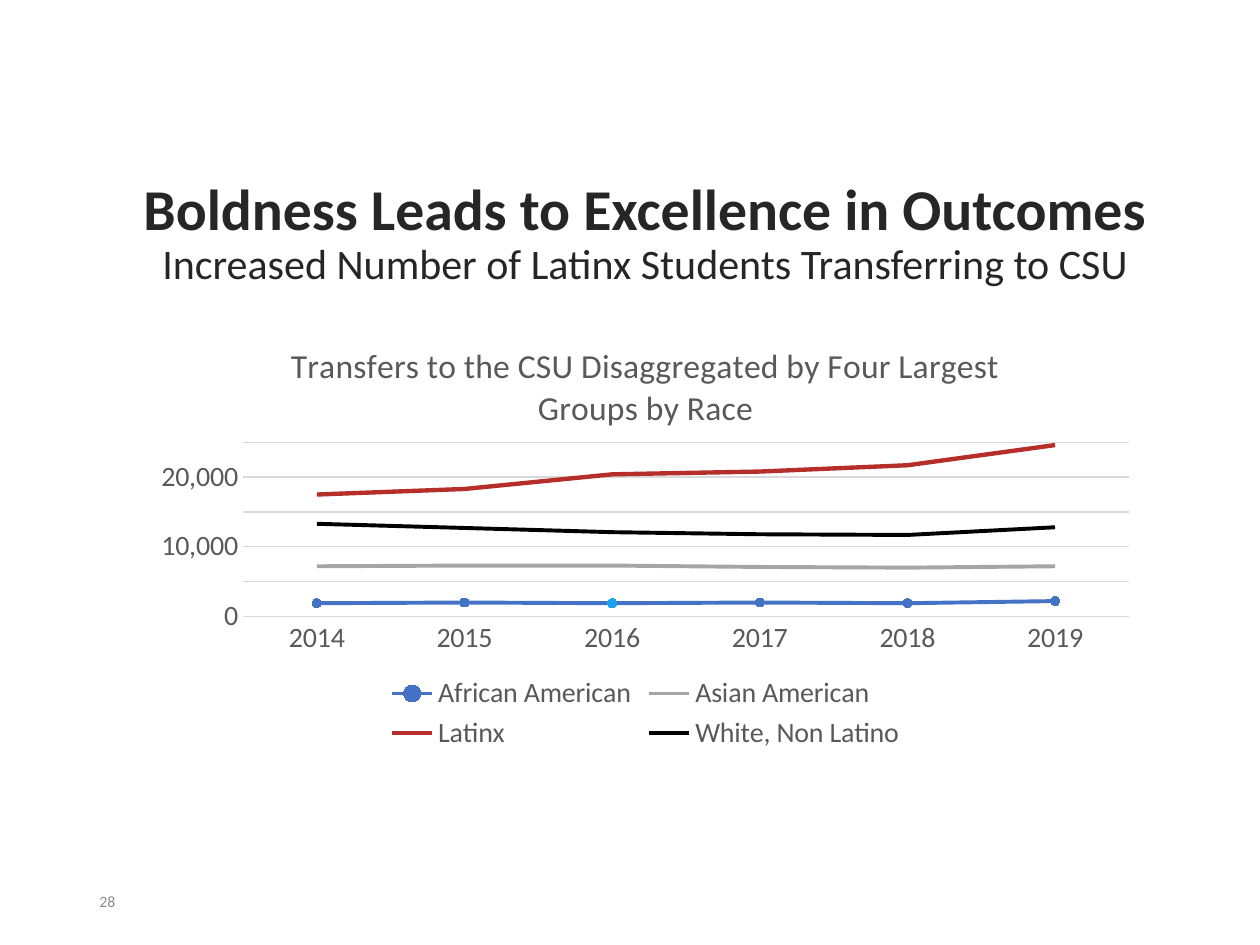
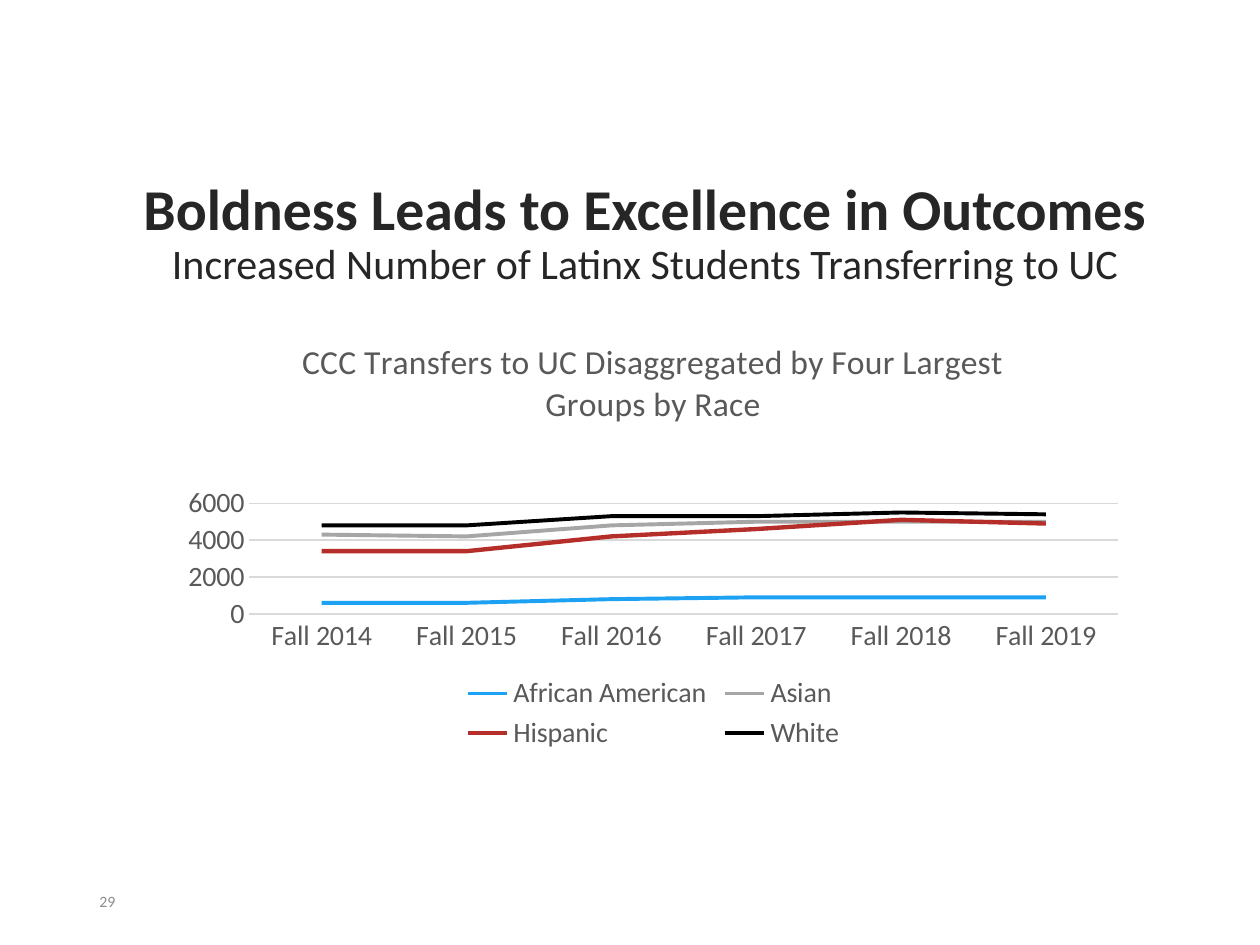
from copy import deepcopy
from dataclasses import dataclass

from lxml import etree
from pptx import Presentation
from pptx import util as u
from pptx.chart.data import CategoryChartData
from pptx.dml.color import RGBColor
from pptx.enum import chart as ce
from pptx.enum import text as te
from pptx.oxml.ns import qn

WIDE, HIGH = u.Inches(10), u.Inches(7.5)
FONT = "Calibri"
COLORS = {
    "head": "262626", "label": "595959", "page": "8C8C8C", "grid": "D9D9D9",
    "blue": "4472C4", "sky": "1DA1F2", "gray": "A5A5A5", "ash": "A6A6A6",
    "red": "B52E29", "black": "000000",
}
HEAD = "Boldness Leads to Excellence in Outcomes"


@dataclass
class Box:
    """A frame in percent of its parent."""
    x: float
    y: float
    w: float
    h: float

    def place(self) -> tuple[int, ...]:
        return (int(self.x * WIDE / 100), int(self.y * HIGH / 100),
                int(self.w * WIDE / 100), int(self.h * HIGH / 100))


@dataclass
class Line:
    name: str
    vals: list[int]
    color: str
    width: float = 2.25
    dots: bool = False


@dataclass
class Page:
    num: int
    sub: str
    title: str
    frame: Box
    plot: Box
    cats: list[str]
    lines: list[Line]
    top: int
    step: int
    form: str = "General"
    minor: bool = False
    accent: int | None = None


HEAD_BOX = Box(8.1, 17, 86.2, 15.6)
NUM_BOX = Box(6.9, 92.7, 22.5, 5.3)
YEARS = range(2014, 2020)

PAGES = [
    Page(28, "Increased Number of Latinx Students Transferring to CSU",
         "Transfers to the CSU Disaggregated by Four Largest Groups by Race",
         Box(11.3, 33.9, 79.9, 46.1), Box(10, 28, 88, 40),
         [str(y) for y in YEARS],
         [Line("African American", [1900, 2000, 1900, 2000, 1900, 2200], "blue", dots=True),
          Line("Asian American", [7200, 7300, 7300, 7100, 7000, 7200], "gray"),
          Line("Latinx", [17500, 18300, 20400, 20800, 21700, 24600], "red", 2.5),
          Line("White, Non Latino", [13300, 12700, 12100, 11800, 11700, 12800], "black")],
         25000, 10000, "#,##0", minor=True, accent=2),
    Page(29, "Increased Number of Latinx Students Transferring to UC",
         "CCC Transfers to UC Disaggregated by Four Largest Groups by Race",
         Box(13.4, 33.5, 76.9, 46.5), Box(8.3, 42.5, 89.7, 25.2),
         [f"Fall {y}" for y in YEARS],
         [Line("African American", [600, 600, 800, 900, 900, 900], "sky"),
          Line("Asian", [4300, 4200, 4800, 5000, 5000, 5000], "ash"),
          Line("Hispanic", [3400, 3400, 4200, 4600, 5100, 4900], "red", 2.5),
          Line("White", [4800, 4800, 5300, 5300, 5500, 5400], "black")],
         6000, 2000),
]


def rgb(name: str) -> RGBColor:
    return RGBColor.from_string(COLORS[name])


def style(font, size: float, color: str, bold: bool = False) -> None:
    font.name, font.size, font.bold = FONT, u.Pt(size), bold
    font.color.rgb = rgb(color)


def stroke(line, color: str, width: float = 0.75) -> None:
    line.color.rgb = rgb(color)
    line.width = u.Pt(width)


def add_text(slide, box: Box):
    """Add a wrapped, middle-anchored text box and return its frame."""
    frame = slide.shapes.add_textbox(*box.place()).text_frame
    frame.word_wrap = True
    frame.vertical_anchor = te.MSO_ANCHOR.MIDDLE
    return frame


def add_head(slide, sub: str) -> None:
    frame = add_text(slide, HEAD_BOX)
    frame.margin_left = frame.margin_right = u.Inches(0.07)
    frame.margin_top = frame.margin_bottom = u.Inches(0.04)
    para = frame.paragraphs[0]
    para.alignment = te.PP_ALIGN.CENTER
    para.line_spacing = 0.9
    for row, (words, size) in enumerate([(HEAD, 33), (sub, 24)]):
        if row:
            para.add_line_break()
        run = para.add_run()
        run.text = words
        style(run.font, size, "head", bold=not row)


def add_num(slide, num: int) -> None:
    para = add_text(slide, NUM_BOX).paragraphs[0]
    para.text = str(num)
    style(para.font, 9, "page")


def fix_plot(chart, box: Box) -> None:
    """Pin the inner plot area to its share of the chart."""
    area = chart.plots[0]._element.getparent()
    for old in area.findall(qn("c:layout")):
        area.remove(old)
    layout = etree.Element(qn("c:layout"))
    area.insert(0, layout)
    manual = etree.SubElement(layout, qn("c:manualLayout"))
    rules = [("layoutTarget", "inner"), ("xMode", "edge"), ("yMode", "edge"),
             ("x", box.x / 100), ("y", box.y / 100),
             ("w", box.w / 100), ("h", box.h / 100)]
    for tag, val in rules:
        etree.SubElement(manual, qn(f"c:{tag}")).set("val", str(val))


def add_minor(axis, step: int) -> None:
    """Add minor gridlines that look like the major ones."""
    axis.minor_unit = step
    axis.has_minor_gridlines = True
    major, minor = (axis._element.find(qn(f"c:{size}Gridlines"))
                    for size in ("major", "minor"))
    minor.append(deepcopy(major[0]))


def set_axes(chart, page: Page) -> None:
    cat, val = chart.category_axis, chart.value_axis
    for axis in (cat, val):
        axis.major_tick_mark = axis.minor_tick_mark = ce.XL_TICK_MARK.NONE
        style(axis.tick_labels.font, 16, "label")
    stroke(cat.format.line, "grid")
    val.format.line.fill.background()
    val.minimum_scale, val.maximum_scale = 0, page.top
    val.major_unit = page.step
    val.tick_labels.number_format = page.form
    val.tick_labels.number_format_is_linked = False
    stroke(val.major_gridlines.format.line, "grid")
    if page.minor:
        add_minor(val, page.step // 2)


def paint(marker, color: str) -> None:
    """Make a round marker of one colour."""
    marker.style, marker.size = ce.XL_MARKER_STYLE.CIRCLE, 5
    marker.format.fill.solid()
    marker.format.fill.fore_color.rgb = rgb(color)
    stroke(marker.format.line, color)


def set_lines(chart, page: Page) -> None:
    for line, series in zip(page.lines, chart.plots[0].series):
        series.smooth = False
        stroke(series.format.line, line.color, line.width)
        if not line.dots:
            series.marker.style = ce.XL_MARKER_STYLE.NONE
            continue
        paint(series.marker, line.color)
        if page.accent is not None:
            point = series.points[page.accent]
            paint(point.marker, "sky")
            stroke(point.format.line, "sky", line.width)


def add_graph(slide, page: Page) -> None:
    data = CategoryChartData(number_format=page.form)
    data.categories = page.cats
    for line in page.lines:
        data.add_series(line.name, line.vals)
    dots = any(line.dots for line in page.lines)
    kind = ce.XL_CHART_TYPE.LINE_MARKERS if dots else ce.XL_CHART_TYPE.LINE
    chart = slide.shapes.add_chart(kind, *page.frame.place(), data).chart
    style(chart.font, 16, "black")
    chart.plots[0].vary_by_categories = False
    chart.has_title = True
    para = chart.chart_title.text_frame.paragraphs[0]
    para.text = page.title
    style(para.font, 19.2, "label")
    chart.chart_title.include_in_layout = False
    chart.has_legend = True
    chart.legend.position = ce.XL_LEGEND_POSITION.BOTTOM
    chart.legend.include_in_layout = False
    style(chart.legend.font, 16, "label")
    set_axes(chart, page)
    set_lines(chart, page)
    fix_plot(chart, page.plot)


def main() -> None:
    deck = Presentation()
    deck.slide_width, deck.slide_height = WIDE, HIGH
    for page in PAGES:
        slide = deck.slides.add_slide(deck.slide_layouts[6])
        add_num(slide, page.num)
        add_graph(slide, page)
        add_head(slide, page.sub)
    deck.save("out.pptx")


if __name__ == "__main__":
    main()
